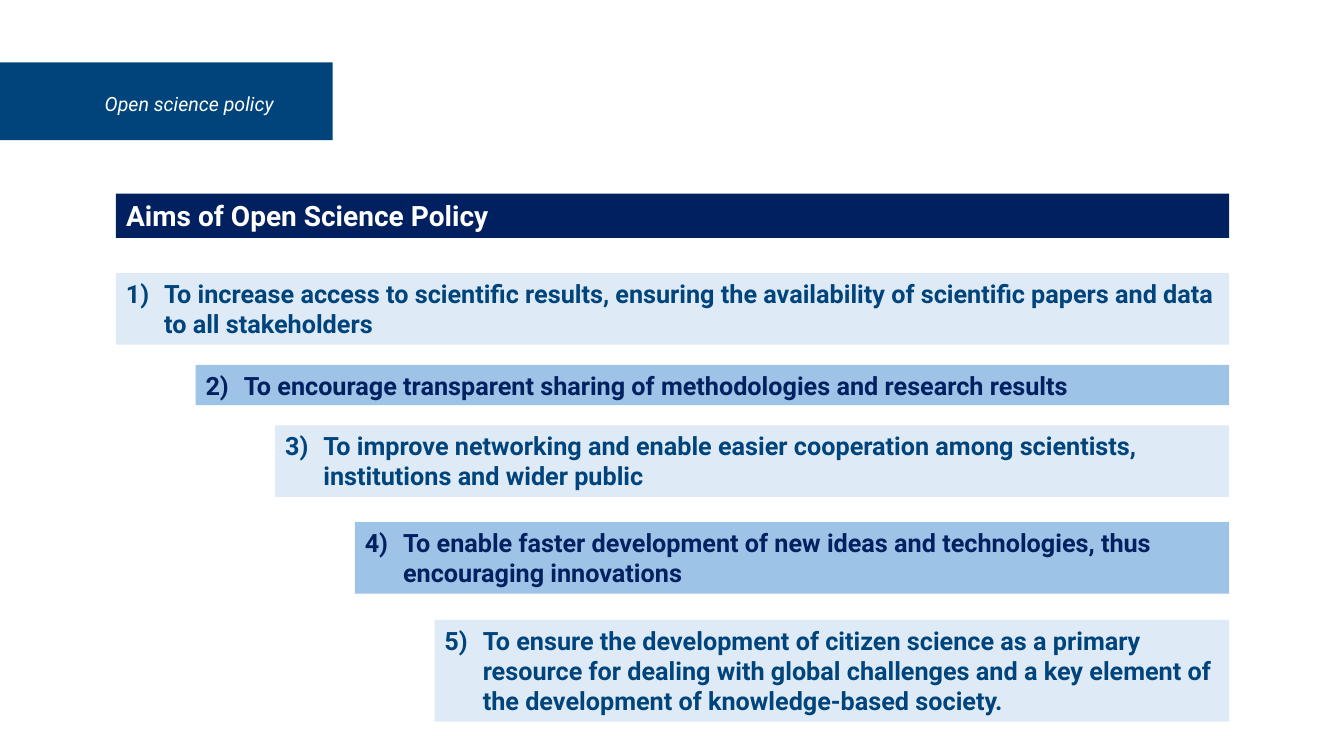
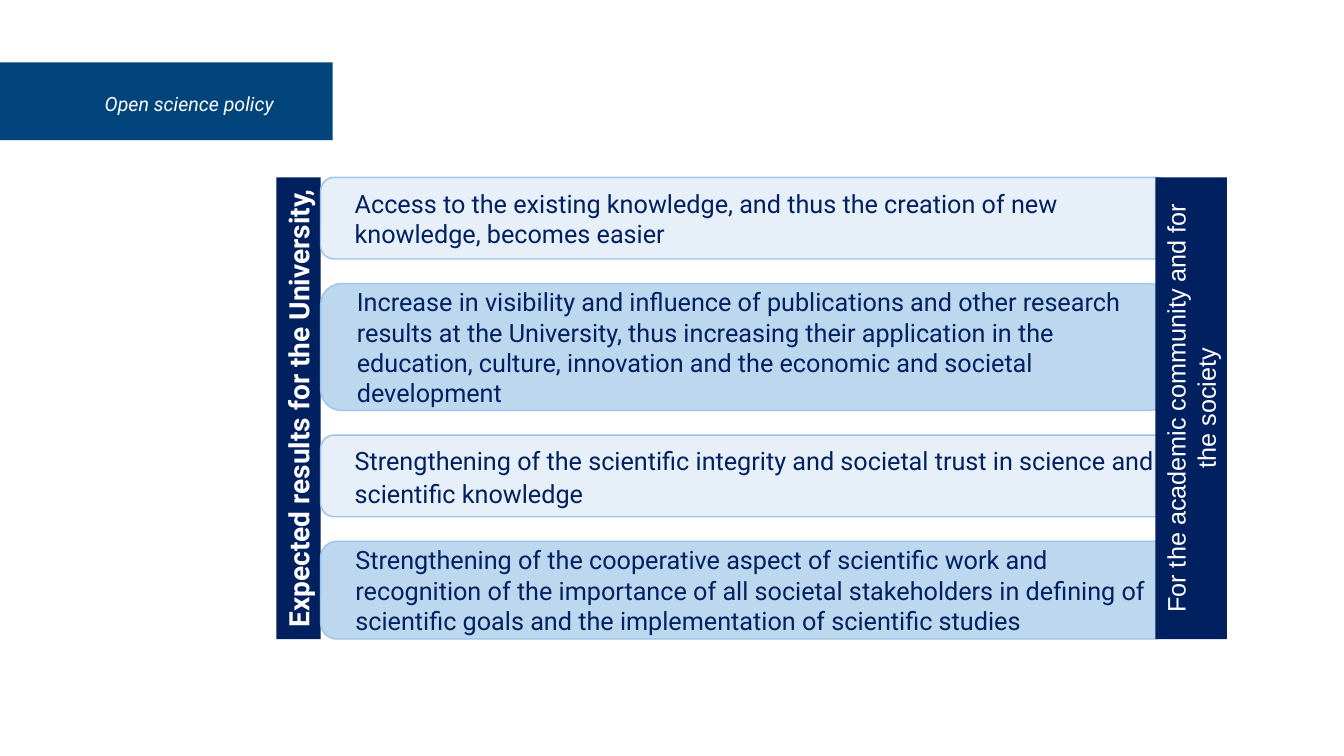
from lxml import etree
from pptx import Presentation
from pptx.dml.color import RGBColor
from pptx.enum import shapes, text
from pptx.oxml import ns
from pptx.util import Inches, Pt

COLORS = {
    "band": "00447B",
    "navy": "002060",
    "white": "FFFFFF",
    "ice": "DEEBF7",
    "sky": "9DC3E6",
    "frost": "E7F0F9",
    "powder": "BDD7EE",
}
TAG_FONT = {"name": "Roboto", "size": Pt(14), "italic": True, "bold": False}
TITLE_FONT = {"name": "Roboto", "size": Pt(20), "bold": True, "italic": False}
AIM_FONT = {"name": "Roboto", "size": Pt(18), "bold": True}
RESULT_FONT = {"name": "Roboto", "size": Pt(18)}
AUDIENCE_FONT = {"name": "Arial", "size": Pt(18)}

TITLE_ONLY = 5
TAG = "Open science policy"

# Top, height, wording
AIMS = [
    (2.71, 0.71, "To increase access to scientific results, ensuring the availability "
                 "of scientific papers and data to all stakeholders"),
    (3.62, 0.4, "To encourage transparent sharing of methodologies and research results"),
    (4.22, 0.71, "To improve networking and enable easier cooperation among scientists, "
                 "institutions and wider public"),
    (5.18, 0.71, "To enable faster development of new ideas and technologies, "
                 "thus encouraging innovations"),
    (6.15, 1.01, "To ensure the development of citizen science as a primary resource for "
                 "dealing with global challenges and a key element of the development of "
                 "knowledge-based society."),
]
# Height, wording
RESULTS = [
    (0.81, "Access to the existing knowledge, and thus the creation of new knowledge, "
           "becomes easier"),
    (1.26, "Increase in visibility and influence of publications and other research results "
           "at the University, thus increasing their application in the education, culture, "
           "innovation and the economic and societal development"),
    (0.81, "Strengthening of the scientific integrity and societal trust in science and "
           "scientific knowledge"),
    (0.97, "Strengthening of the cooperative aspect of scientific work and recognition of "
           "the importance of all societal stakeholders in defining of scientific goals and "
           "the implementation of scientific studies"),
]


def place(shape, box):
    for name, value in zip(("left", "top", "width", "height"), box):
        setattr(shape, name, Inches(value))


def place_upright(shape, box):
    """Turn a shape to read upwards so that it covers the box."""
    left, top, width, height = box
    shift = (height - width) / 2
    place(shape, (left - shift, top + shift, height, width))
    shape.rotation = 270


def fill(shape, color):
    shape.fill.solid()
    shape.fill.fore_color.rgb = RGBColor.from_string(COLORS[color])


def add_box(slide, box, color, kind=shapes.MSO_SHAPE.RECTANGLE, outline=None):
    shape = slide.shapes.add_shape(kind, *map(Inches, box))
    shape.shadow.inherit = False
    fill(shape, color)
    if outline:
        shape.line.color.rgb = RGBColor.from_string(COLORS[outline])
        shape.line.width = Pt(1)
    else:
        shape.line.fill.background()
    return shape


def indent(paragraph, left, hanging=0.0, number=None):
    properties = paragraph._p.get_or_add_pPr()
    properties.set("marL", str(Inches(left)))
    properties.set("indent", str(-Inches(hanging)))
    if number:
        etree.SubElement(properties, ns.qn("a:buFont"), typeface="+mj-lt")
        etree.SubElement(properties, ns.qn("a:buAutoNum"),
                         type="arabicParenR", startAt=str(number))


def write(shape, words, font, color, align=text.PP_ALIGN.LEFT, anchor=text.MSO_ANCHOR.TOP):
    frame = shape.text_frame
    frame.word_wrap = True
    frame.auto_size = text.MSO_AUTO_SIZE.NONE
    frame.vertical_anchor = anchor
    paragraph = frame.paragraphs[0]
    paragraph.alignment = align
    run = paragraph.add_run()
    run.text = words
    for name, value in font.items():
        setattr(run.font, name, value)
    run.font.color.rgb = RGBColor.from_string(COLORS[color])
    return paragraph


def add_policy_slide(presentation):
    """Add a slide with the section band and its tag."""
    slide = presentation.slides.add_slide(presentation.slide_layouts[TITLE_ONLY])
    add_box(slide, (0, 0.62, 3.3, 0.77), "band")
    tag = slide.shapes.add_textbox(*map(Inches, (0.94, 0.86, 2.36, 0.34)))
    write(tag, TAG, TAG_FONT, "white")
    return slide


def add_aims(slide, left, right, step):
    """Add numbered bars that share a right edge and step in on the left."""
    looks = [("ice", "band"), ("sky", "navy")]
    for index, (top, height, words) in enumerate(AIMS):
        bar_color, text_color = looks[index % 2]
        bar_left = left + index * step
        bar = add_box(slide, (bar_left, top, right - bar_left, height), bar_color)
        indent(bar.text_frame.paragraphs[0], 0.38, 0.38, index + 1)
        write(bar, words, AIM_FONT, text_color)


def add_results(slide, box):
    """Stack the result cards with equal gaps over the height of the box."""
    left, top, width, height = box
    gap = (height - sum(card_height for card_height, _ in RESULTS)) / (len(RESULTS) - 1)
    for index, (card_height, words) in enumerate(RESULTS):
        card = add_box(slide, (left, top, width, card_height), ("frost", "powder")[index % 2],
                       shapes.MSO_SHAPE.ROUNDED_RECTANGLE, "sky")
        indent(card.text_frame.paragraphs[0], 0.2)
        paragraph = write(card, words, RESULT_FONT, "navy", anchor=text.MSO_ANCHOR.MIDDLE)
        if index == 2:
            paragraph.line_spacing = 1.07
            paragraph.space_after = Pt(8)
        top += card_height + gap


def build_aims_slide(presentation):
    slide = add_policy_slide(presentation)
    left, right = 1.15, 12.19
    title = slide.shapes.title
    place(title, (left, 1.92, right - left, 0.44))
    fill(title, "navy")
    write(title, "Aims of Open Science Policy", TITLE_FONT, "white")
    add_aims(slide, left, right, 0.79)


def build_results_slide(presentation):
    slide = add_policy_slide(presentation)
    top, height = 1.76, 4.58
    title = slide.shapes.title
    place_upright(title, (2.74, top, 0.44, height))
    fill(title, "navy")
    write(title, "Expected results for the University,", TITLE_FONT, "white",
          text.PP_ALIGN.CENTER)
    add_results(slide, (3.18, top, 8.43, height))
    audience_box = (11.46, top, 0.71, height)
    audience = add_box(slide, audience_box, "navy")
    place_upright(audience, audience_box)
    write(audience, "For the academic community and for the society", AUDIENCE_FONT, "white",
          text.PP_ALIGN.CENTER)


def main():
    presentation = Presentation()
    presentation.slide_width = Inches(13.33)
    presentation.slide_height = Inches(7.5)
    build_aims_slide(presentation)
    build_results_slide(presentation)
    presentation.save("out.pptx")


if __name__ == "__main__":
    main()
